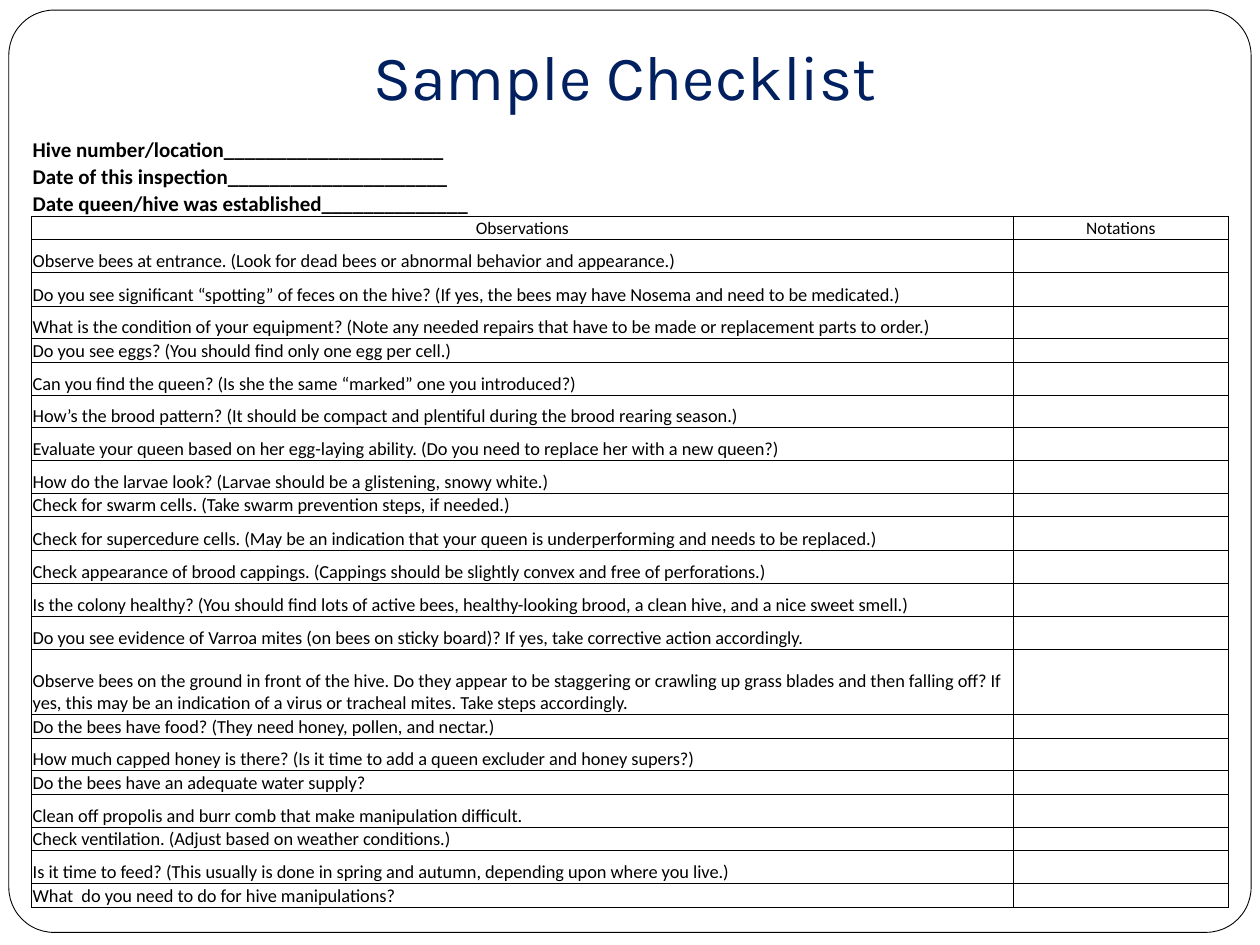
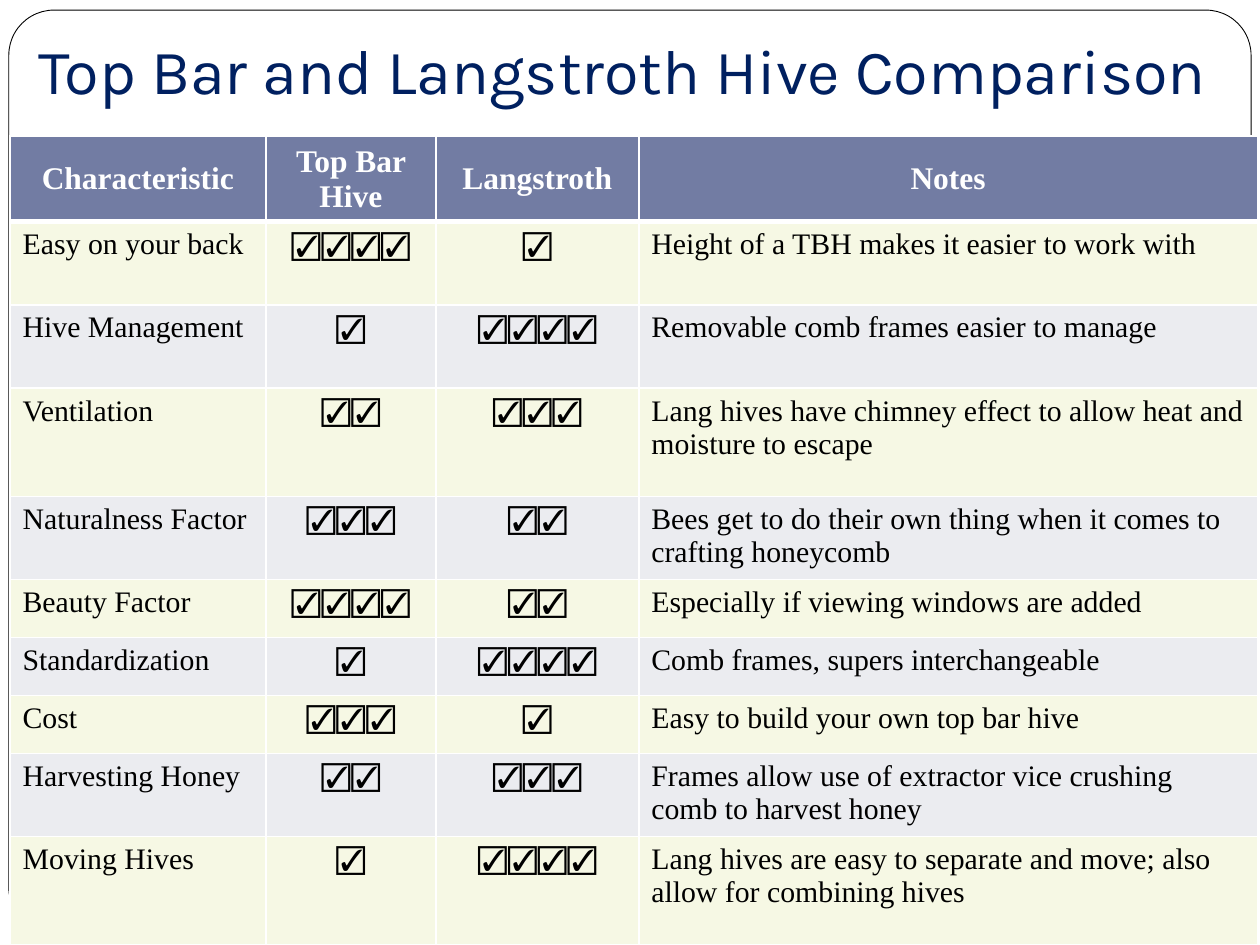
from lxml import etree
from pptx import Presentation
from pptx.dml.color import RGBColor
from pptx.enum.shapes import MSO_SHAPE
from pptx.enum.text import MSO_ANCHOR, MSO_AUTO_SIZE, PP_ALIGN
from pptx.oxml.ns import qn
from pptx.util import Inches, Pt

LEFT, CENTER = PP_ALIGN.LEFT, PP_ALIGN.CENTER
TOP, MIDDLE, BOTTOM = MSO_ANCHOR.TOP, MSO_ANCHOR.MIDDLE, MSO_ANCHOR.BOTTOM
ROUNDED = MSO_SHAPE.ROUNDED_RECTANGLE
NO_AUTOFIT = MSO_AUTO_SIZE.NONE
TITLE_ONLY = 5

BLACK, WHITE, NAVY = "000000", "FFFFFF", "002060"
HEADER_BLUE, BAND_CREAM, BAND_GREY = "727CA3", "F6F8E4", "EBECF0"
TITLE_FONT, CHECKLIST_FONT = "Karla", "Calibri"
TEXT_FONT, TICK_FONT = "Times New Roman", "Arial"

color = RGBColor.from_string


def write_cell(cell, text, font, size, text_color=BLACK, bold=False, align=LEFT, anchor=TOP):
    cell.vertical_anchor = anchor
    paragraph = cell.text_frame.paragraphs[0]
    paragraph.alignment = align
    if not text:
        # An empty cell needs its text size too, or its row grows
        end = etree.SubElement(paragraph._p, qn("a:endParaRPr"))
        end.set("sz", str(int(size * 100)))
        return
    run = paragraph.add_run()
    run.text = text
    run.font.name = font
    run.font.size = Pt(size)
    run.font.bold = bold
    run.font.color.rgb = color(text_color)


def style_cell(cell, fill, line_color, left, right, top, bottom):
    properties = cell._tc.get_or_add_tcPr()
    for side, width in zip("LRTB", (left, right, top, bottom)):
        line = etree.SubElement(properties, qn(f"a:ln{side}"), w=str(Pt(width)))
        if width:
            solid = etree.SubElement(line, qn("a:solidFill"))
            etree.SubElement(solid, qn("a:srgbClr"), val=line_color)
        else:
            etree.SubElement(line, qn("a:noFill"))
    if fill:
        cell.fill.solid()
        cell.fill.fore_color.rgb = color(fill)
    else:
        cell.fill.background()


presentation = Presentation()
presentation.slide_width = Inches(10)
presentation.slide_height = Inches(7.5)

# Slides with their page border and title
titles = [
    ("Sample Checklist", 0.42, 0.3, 9.08, 0.7),
    ("Top Bar and Langstroth Hive Comparison ", 0, 0.17, 10, 0.78),
]
slides = []
for text, left, top, width, height in titles:
    slide = presentation.slides.add_slide(presentation.slide_layouts[TITLE_ONLY])
    border = slide.shapes.add_shape(
        ROUNDED, Inches(0.07), Inches(0.08), Inches(9.86), Inches(7.32))
    border.adjustments[0] = 0.049
    border.shadow.inherit = False
    border.fill.solid()
    border.fill.fore_color.rgb = color(WHITE)
    border.line.color.rgb = color(BLACK)
    border.line.width = Pt(0.5)

    title = slide.shapes.title
    border.element.addnext(title.element)  # title in front of the border
    title.left, title.top = Inches(left), Inches(top)
    title.width, title.height = Inches(width), Inches(height)
    frame = title.text_frame
    frame.text = text
    frame.auto_size = NO_AUTOFIT
    frame.word_wrap = True
    frame.vertical_anchor = BOTTOM
    frame.margin_left = frame.margin_right = frame.margin_bottom = Inches(0.1)
    frame.margin_top = Inches(0.05)
    paragraph = frame.paragraphs[0]
    paragraph.alignment = CENTER
    font = paragraph.runs[0].font
    font.name = TITLE_FONT
    font.size = Pt(36)
    font.color.rgb = color(NAVY)
    slides.append(slide)
checklist_slide, comparison_slide = slides

# Checklist: blanks to fill in, column heads, then questions with row heights
blanks = [
    "Hive number/location_____________________",
    "Date of this inspection_____________________",
    "Date queen/hive was established______________",
]
questions = [
    ("Observe bees at entrance. (Look for dead bees or abnormal behavior and appearance.)", 0.26),
    ("Do you see significant “spotting” of feces on the hive? "
     "(If yes, the bees may have Nosema and need to be medicated.)", 0.27),
    ("What is the condition of your equipment? "
     "(Note any needed repairs that have to be made or replacement parts to order.)", 0.26),
    ("Do you see eggs? (You should find only one egg per cell.)", 0.17),
    ("Can you find the queen? (Is she the same “marked” one you introduced?)", 0.26),
    ("How’s the brood pattern? "
     "(It should be compact and plentiful during the brood rearing season.)", 0.26),
    ("Evaluate your queen based on her egg-laying ability. "
     "(Do you need to replace her with a new queen?)", 0.26),
    ("How do the larvae look? (Larvae should be a glistening, snowy white.)", 0.26),
    ("Check for swarm cells. (Take swarm prevention steps, if needed.)", 0.17),
    ("Check for supercedure cells. "
     "(May be an indication that your queen is underperforming and needs to be replaced.)", 0.27),
    ("Check appearance of brood cappings. "
     "(Cappings should be slightly convex and free of perforations.)", 0.26),
    ("Is the colony healthy? (You should find lots of active bees, "
     "healthy-looking brood, a clean hive, and a nice sweet smell.)", 0.26),
    ("Do you see evidence of Varroa mites (on bees on sticky board)? "
     "If yes, take corrective action accordingly.", 0.26),
    ("Observe bees on the ground in front of the hive. Do they appear to be staggering or "
     "crawling up grass blades and then falling off? If yes, this may be an indication of "
     "a virus or tracheal mites. Take steps accordingly.", 0.52),
    ("Do the bees have food? (They need honey, pollen, and nectar.)", 0.17),
    ("How much capped honey is there? "
     "(Is it time to add a queen excluder and honey supers?)", 0.26),
    ("Do the bees have an adequate water supply?", 0.17),
    ("Clean off propolis and burr comb that make manipulation difficult.", 0.26),
    ("Check ventilation. (Adjust based on weather conditions.)", 0.17),
    ("Is it time to feed? "
     "(This usually is done in spring and autumn, depending upon where you live.)", 0.26),
    ("What  do you need to do for hive manipulations?", 0.17),
]
checklist_rows = [(text, "", 0.19, 12, True, LEFT) for text in blanks]
checklist_rows.append(("Observations", "Notations", 0.16, 10, False, CENTER))
checklist_rows += [(text, "", height, 10.5, False, LEFT) for text, height in questions]

checklist = checklist_slide.shapes.add_table(
    len(checklist_rows), 2, Inches(0.25), Inches(1.08), Inches(9.5), Inches(6.09)).table
checklist.first_row = checklist.horz_banding = False
checklist.columns[0].width = Inches(7.79)
checklist.columns[1].width = Inches(1.71)
for row, (text, note, height, size, bold, align) in enumerate(checklist_rows):
    checklist.rows[row].height = Inches(height)
    side = 0.5 if row >= len(blanks) else 0
    bottom = 0.5 if row >= len(blanks) - 1 else 0
    for column, cell_text in enumerate((text, note)):
        cell = checklist.cell(row, column)
        cell.margin_left = cell.margin_right = cell.margin_top = Inches(0.01)
        cell.margin_bottom = 0
        write_cell(cell, cell_text, CHECKLIST_FONT, size, bold=bold, align=align, anchor=BOTTOM)
        style_cell(cell, None, BLACK, side, side, side, bottom)

# Comparison: characteristic, ticks for each hive, notes, row height
headers = ["Characteristic", "Top Bar Hive", "Langstroth", "Notes"]
comparisons = [
    ("Easy on your back", 4, 1, "Height of a TBH makes it easier to work with", 0.66),
    ("Hive Management", 1, 4, "Removable comb frames easier to manage", 0.66),
    ("Ventilation", 2, 3,
     "Lang hives have chimney effect to allow heat and moisture to escape", 0.86),
    ("Naturalness Factor", 3, 2,
     "Bees get to do their own thing when it comes to crafting honeycomb", 0.66),
    ("Beauty Factor", 4, 2, "Especially if viewing windows are added", 0.46),
    ("Standardization", 1, 4, "Comb frames, supers interchangeable", 0.46),
    ("Cost", 3, 1, "Easy to build your own top bar hive", 0.46),
    ("Harvesting Honey", 2, 3,
     "Frames allow use of extractor vice crushing comb to harvest honey", 0.66),
    ("Moving Hives", 1, 4,
     "Lang hives are easy to separate and move; also allow for combining hives", 0.86),
]
comparison = comparison_slide.shapes.add_table(
    len(comparisons) + 1, len(headers),
    Inches(0.08), Inches(1.08), Inches(9.9), Inches(6.46)).table
for column, width in enumerate((2.03, 1.35, 1.61, 4.91)):
    comparison.columns[column].width = Inches(width)

comparison.rows[0].height = Inches(0.68)
for column, text in enumerate(headers):
    cell = comparison.cell(0, column)
    write_cell(cell, text, TEXT_FONT, 18, WHITE, True, CENTER, MIDDLE)
    style_cell(cell, HEADER_BLUE, WHITE, 1, 1, 1, 3)

for row, (name, top_bar, langstroth, note, height) in enumerate(comparisons, start=1):
    comparison.rows[row].height = Inches(height)
    band = BAND_CREAM if row % 2 else BAND_GREY
    for column, value in enumerate((name, top_bar, langstroth, note)):
        cell = comparison.cell(row, column)
        if column in (1, 2):
            write_cell(cell, "☑" * value, TICK_FONT, 17, align=CENTER)
        else:
            write_cell(cell, value, TEXT_FONT, 17)
        style_cell(cell, band, WHITE, 1, 1, 3 if row == 1 else 1, 1)

presentation.save("out.pptx")
